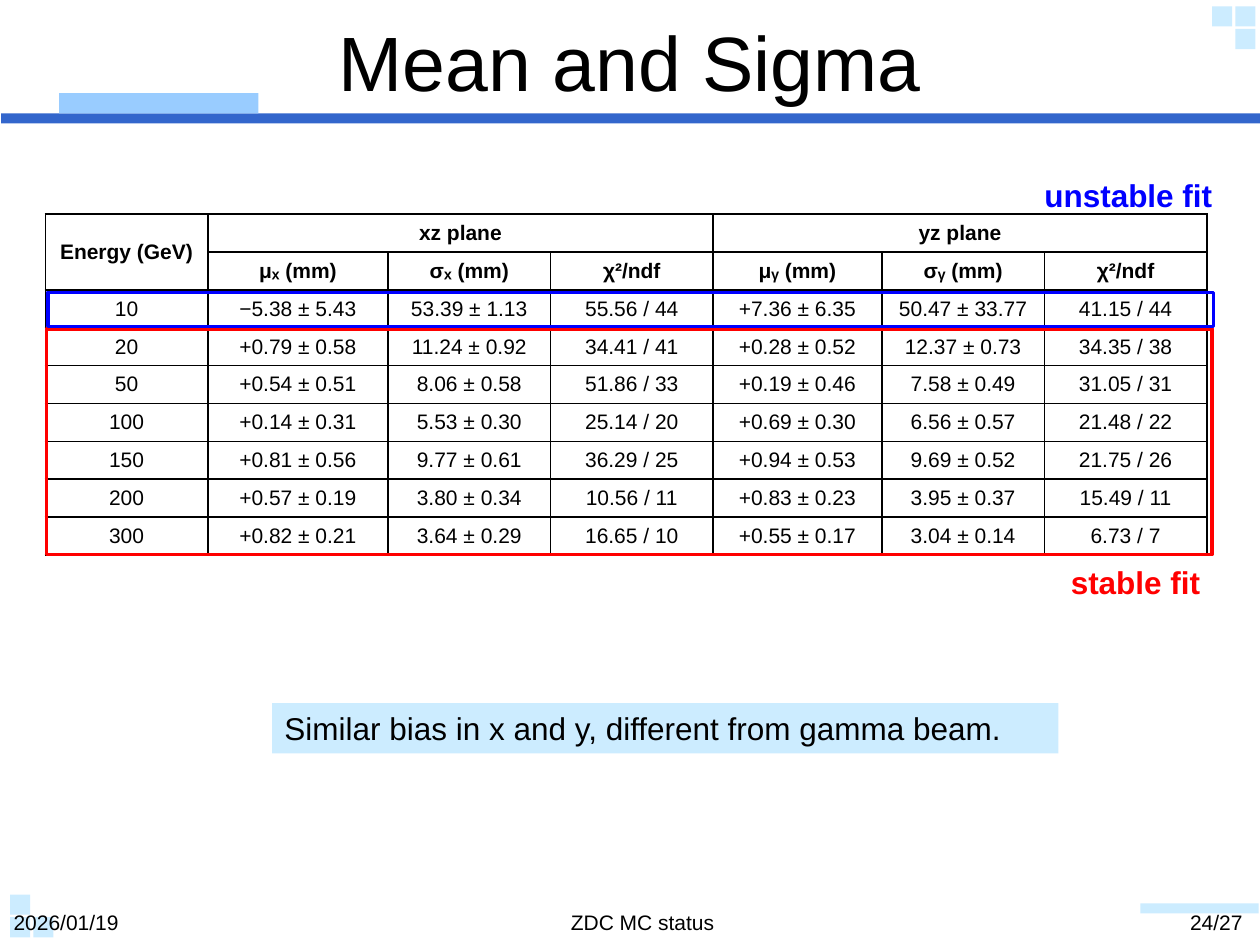
import dataclasses

import lxml.etree
import pptx
import pptx.dml.color
import pptx.enum.shapes
import pptx.enum.text
import pptx.oxml.ns
import pptx.util

COLS, ROWS = 100, 75
UNIT = pptx.util.Inches(0.1)
ALIGN = pptx.enum.text.PP_ALIGN
ANCHOR = pptx.enum.text.MSO_ANCHOR


@dataclasses.dataclass(frozen=True)
class Theme:
    font: str = "Arial"
    ink: str = "000000"
    pale: str = "CCECFF"
    light: str = "99CCFF"
    deep: str = "3366CC"
    red: str = "FF0000"
    blue: str = "0000FF"
    head: int = 44
    note: int = 18
    small: int = 12
    edge: int = 2
    rule: int = 1


@dataclasses.dataclass(frozen=True)
class Box:
    x: float
    y: float
    w: float
    h: float

    def inner(self, x, y, w, h):
        return Box(self.x + x, self.y + y, w, h)

    def place(self):
        return [round(v * UNIT) for v in (self.x, self.y, self.w, self.h)]


LOOK = Theme()
HEADS = ["μₓ (mm)", "σₓ (mm)", "χ²/ndf", "μᵧ (mm)", "σᵧ (mm)", "χ²/ndf"]
DATA = [
    ["10", "−5.38 ± 5.43", "53.39 ± 1.13", "55.56 / 44", "+7.36 ± 6.35", "50.47 ± 33.77", "41.15 / 44"],
    ["20", "+0.79 ± 0.58", "11.24 ± 0.92", "34.41 / 41", "+0.28 ± 0.52", "12.37 ± 0.73", "34.35 / 38"],
    ["50", "+0.54 ± 0.51", "8.06 ± 0.58", "51.86 / 33", "+0.19 ± 0.46", "7.58 ± 0.49", "31.05 / 31"],
    ["100", "+0.14 ± 0.31", "5.53 ± 0.30", "25.14 / 20", "+0.69 ± 0.30", "6.56 ± 0.57", "21.48 / 22"],
    ["150", "+0.81 ± 0.56", "9.77 ± 0.61", "36.29 / 25", "+0.94 ± 0.53", "9.69 ± 0.52", "21.75 / 26"],
    ["200", "+0.57 ± 0.19", "3.80 ± 0.34", "10.56 / 11", "+0.83 ± 0.23", "3.95 ± 0.37", "15.49 / 11"],
    ["300", "+0.82 ± 0.21", "3.64 ± 0.29", "16.65 / 10", "+0.55 ± 0.17", "3.04 ± 0.14", "6.73 / 7"],
]
WIDTHS = [12.9, 14.3, 12.9, 12.9, 13.4, 12.9, 12.9]


def paint(text):
    return pptx.dml.color.RGBColor.from_string(text)


def write(frame, text, size=LOOK.small, color=LOOK.ink, bold=False, align=ALIGN.LEFT):
    para = frame.paragraphs[0]
    para.alignment = align
    run = para.add_run()
    run.text = text
    run.font.name = LOOK.font
    run.font.size = pptx.util.Pt(size)
    run.font.bold = bold
    run.font.color.rgb = paint(color)


def label(slide, box, text, anchor=ANCHOR.TOP, **form):
    frame = slide.shapes.add_textbox(*box.place()).text_frame
    frame.word_wrap = True
    frame.vertical_anchor = anchor
    write(frame, text, **form)


def block(slide, box, fill=None, line=None):
    shape = slide.shapes.add_shape(pptx.enum.shapes.MSO_SHAPE.RECTANGLE, *box.place())
    shape.shadow.inherit = False
    if fill:
        shape.fill.solid()
        shape.fill.fore_color.rgb = paint(fill)
    else:
        shape.fill.background()
    if line:
        shape.line.color.rgb = paint(line)
        shape.line.width = pptx.util.Pt(LOOK.edge)
    else:
        shape.line.fill.background()
    return shape


def squares(slide, box, spots):
    for col, row in spots:
        block(slide, box.inner(1.85 * col, 1.8 * row, 1.6, 1.6), fill=LOOK.pale)


def header(slide, box):
    block(slide, box.inner(0.1, 9, 100.1, 0.8), fill=LOOK.deep)
    block(slide, box.inner(4.7, 7.4, 15.8, 1.6), fill=LOOK.light)
    squares(slide, box.inner(96.2, 0.5, 3.5, 3.4), [(0, 0), (1, 0), (1, 1)])
    label(slide, box.inner(0.1, 0.5, 99.8, 8.7), "Mean and Sigma",
          anchor=ANCHOR.MIDDLE, size=LOOK.head, align=ALIGN.CENTER)


def footer(slide, box):
    squares(slide, box.inner(0.8, 0, 3.5, 3.4), [(0, 0), (0, 1), (1, 1)])
    block(slide, box.inner(90.5, 0.7, 9.4, 0.8), fill=LOOK.pale)
    items = [
        (0.1, 20, "2026/01/19", ALIGN.LEFT),
        (20.1, 61.8, "ZDC MC status", ALIGN.CENTER),
        (81.9, 17.7, "24/27", ALIGN.RIGHT),
    ]
    for x, w, text, align in items:
        label(slide, box.inner(x, 0.7, w, 3.3), text, align=align)


def border(cell):
    props = cell._tc.get_or_add_tcPr()
    for side in ("lnL", "lnR", "lnT", "lnB"):
        line = lxml.etree.SubElement(props, pptx.oxml.ns.qn("a:" + side),
                                     w=str(pptx.util.Pt(LOOK.rule)))
        fill = lxml.etree.SubElement(line, pptx.oxml.ns.qn("a:solidFill"))
        lxml.etree.SubElement(fill, pptx.oxml.ns.qn("a:srgbClr"), val=LOOK.ink)


def grid(slide, box):
    rows = [["Energy (GeV)", "xz plane", "", "", "yz plane", "", ""], [""] + HEADS] + DATA
    table = slide.shapes.add_table(len(rows), len(WIDTHS), *box.place()).table
    table.first_row = table.horz_banding = False
    for col, width in zip(table.columns, WIDTHS):
        col.width = round(width * UNIT)
    for row in table.rows:
        row.height = round(box.h / len(rows) * UNIT)
    for r, row in enumerate(rows):
        for c, text in enumerate(row):
            cell = table.cell(r, c)
            border(cell)
            cell.fill.background()
            cell.vertical_anchor = ANCHOR.MIDDLE
            if text:
                write(cell.text_frame, text, bold=r < 2, align=ALIGN.CENTER)
    for top, left, base, right in [(0, 0, 1, 0), (0, 1, 0, 3), (0, 4, 0, 6)]:
        table.cell(top, left).merge(table.cell(base, right))


def results(slide, box):
    grid(slide, box.inner(0, 3.5, sum(WIDTHS), 25.2))
    block(slide, box.inner(0.1, 12.6, 92.5, 17.9), line=LOOK.red)
    label(slide, box.inner(80.4, 30.7, 15.7, 4), "stable fit",
          size=LOOK.note, color=LOOK.red, bold=True)
    block(slide, box.inner(0.2, 9.7, 92.5, 2.7), line=LOOK.blue)
    label(slide, box.inner(78.3, 0, 15.8, 4), "unstable fit",
          size=LOOK.note, color=LOOK.blue, bold=True)


def remark(slide, box):
    frame = block(slide, box, fill=LOOK.pale).text_frame
    frame.word_wrap = True
    frame.vertical_anchor = ANCHOR.TOP
    write(frame, "Similar bias in x and y, different from gamma beam.", size=LOOK.note)


def main():
    deck = pptx.Presentation()
    deck.slide_width, deck.slide_height = COLS * UNIT, ROWS * UNIT
    slide = deck.slides.add_slide(deck.slide_layouts[6])
    header(slide, Box(0, 0, COLS, 10))
    footer(slide, Box(0, 71, COLS, 4))
    results(slide, Box(3.6, 13.5, 96, 35))
    remark(slide, Box(21.6, 55.8, 62.4, 4))
    deck.save("out.pptx")


if __name__ == "__main__":
    main()
